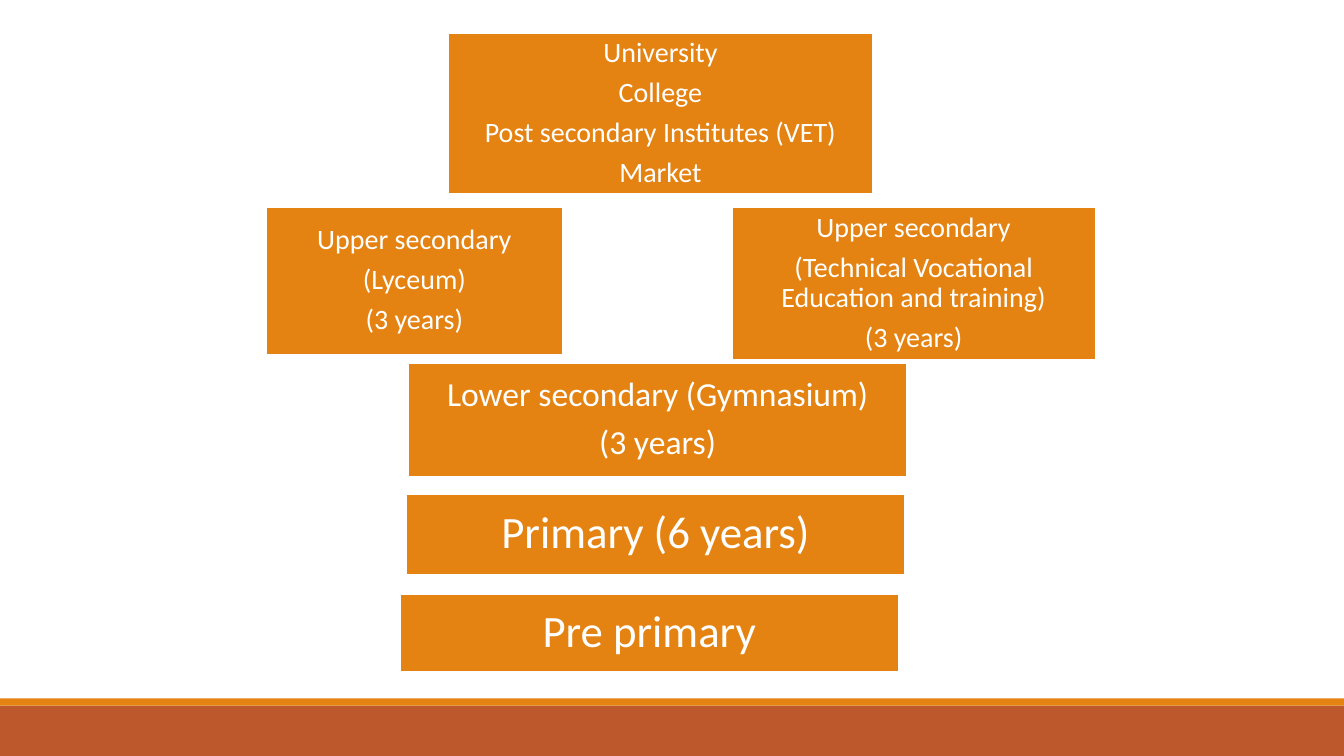
from dataclasses import dataclass

from pptx import Presentation
from pptx.dml.color import RGBColor
from pptx.enum.shapes import MSO_SHAPE
from pptx.enum.text import MSO_ANCHOR, PP_ALIGN
from pptx.shapes.autoshape import Shape
from pptx.slide import Slide
from pptx.util import Cm, Pt

ORANGE = "E48312"
RUST = "BD582C"
WHITE = "FFFFFF"
WIDTH = 33.87
HEIGHT = 19.05
BOX_WIDTH = 12.57


@dataclass
class Stage:
    left: float
    top: float
    width: float
    height: float
    size: int
    lines: list[str]


STAGES = [
    Stage(10.29, 9.14, BOX_WIDTH, 2.87, 24, ["Lower secondary (Gymnasium)", "(3 years)"]),
    Stage(6.71, 5.21, 7.47, 3.73, 20, ["Upper secondary", "(Lyceum)", "(3 years)"]),
    Stage(11.3, 0.84, 10.69, 4.04, 20,
          ["University", "College", "Post secondary Institutes (VET)", "Market"]),
    Stage(10.24, 12.45, BOX_WIDTH, 2.03, 32, ["Primary (6 years)"]),
    Stage(10.08, 14.96, BOX_WIDTH, 1.96, 32, ["Pre primary"]),
    Stage(18.44, 5.21, 9.17, 3.86, 20,
          ["Upper secondary", "(Technical Vocational Education and training)", "(3 years)"]),
]


def rgb(value: str) -> RGBColor:
    return RGBColor.from_string(value)


def add_rect(s: Slide, left: float, top: float, width: float, height: float, fill: str) -> Shape:
    sp = s.shapes.add_shape(MSO_SHAPE.RECTANGLE, Cm(left), Cm(top), Cm(width), Cm(height))
    sp.shadow.inherit = False
    sp.fill.solid()
    sp.fill.fore_color.rgb = rgb(fill)
    sp.line.fill.background()
    return sp


def add_stage(s: Slide, stage: Stage) -> None:
    sp = add_rect(s, stage.left, stage.top, stage.width, stage.height, ORANGE)
    sp.line.color.rgb = rgb(WHITE)
    sp.line.width = Pt(1.25)
    tf = sp.text_frame
    tf.word_wrap = True
    tf.vertical_anchor = MSO_ANCHOR.MIDDLE
    inset = Cm(stage.size / 100)
    tf.margin_left = tf.margin_right = tf.margin_top = tf.margin_bottom = inset
    tf.text = "\n".join(stage.lines)
    for p in tf.paragraphs:
        p.alignment = PP_ALIGN.CENTER
        p.line_spacing = 0.9
        p.space_after = Pt(stage.size * 0.35)
        for r in p.runs:
            r.font.name = "Calibri"
            r.font.size = Pt(stage.size)
            r.font.color.rgb = rgb(WHITE)


def main() -> None:
    """Build the slide of education stages and save it."""
    prs = Presentation()
    prs.slide_width = Cm(WIDTH)
    prs.slide_height = Cm(HEIGHT)
    s = prs.slides.add_slide(prs.slide_layouts[6])
    add_rect(s, 0, 17.78, WIDTH, 1.27, RUST)
    add_rect(s, 0, 17.6, WIDTH, 0.18, ORANGE)
    for stage in STAGES:
        add_stage(s, stage)
    prs.save("out.pptx")


if __name__ == "__main__":
    main()
